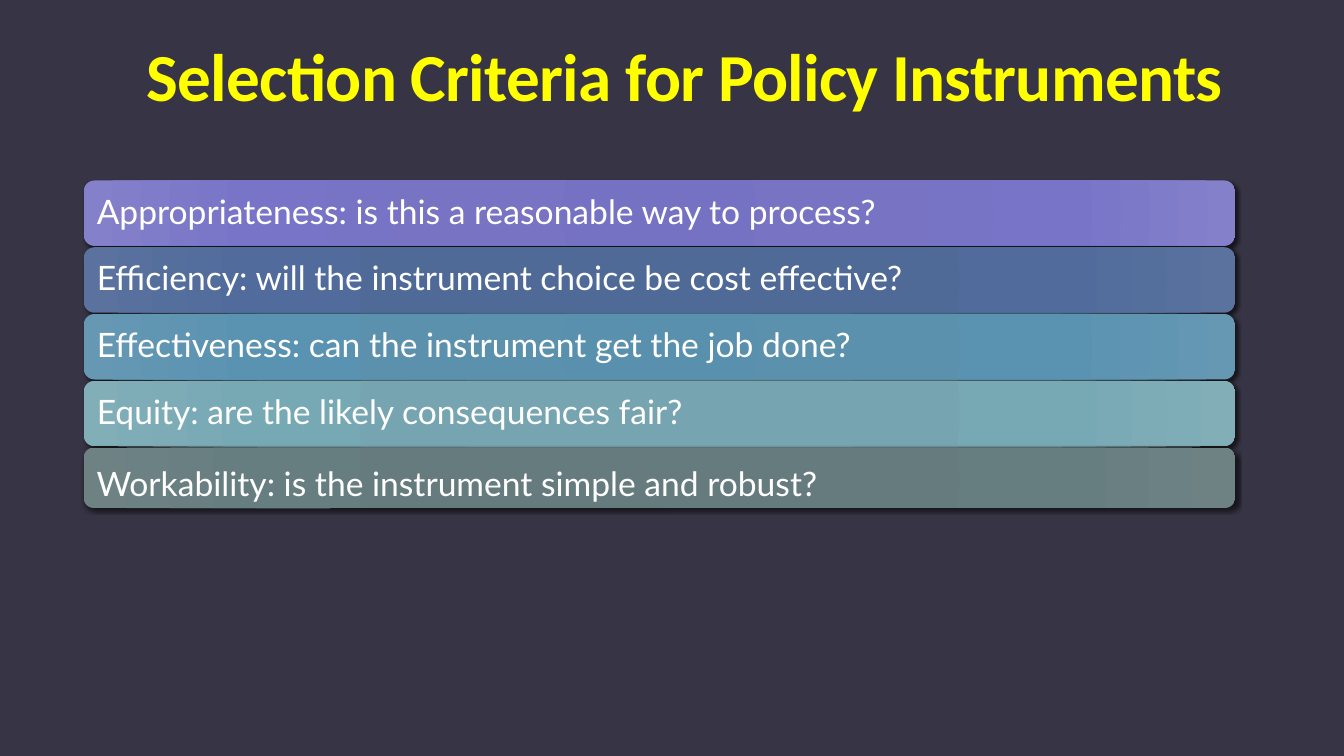
from dataclasses import dataclass

from lxml import etree
from pptx import Presentation
from pptx.dml.color import RGBColor
from pptx.enum.shapes import MSO_SHAPE
from pptx.enum.text import MSO_ANCHOR, PP_ALIGN
from pptx.oxml import parse_xml
from pptx.oxml.ns import nsdecls, qn
from pptx.shapes.autoshape import Shape
from pptx.slide import Slide
from pptx.text.text import TextFrame
from pptx.util import Inches, Pt

ROUNDED = MSO_SHAPE.ROUNDED_RECTANGLE
MIDDLE, BOTTOM = MSO_ANCHOR.MIDDLE, MSO_ANCHOR.BOTTOM
LEFT, CENTER = PP_ALIGN.LEFT, PP_ALIGN.CENTER

COLORS = {"background": "373545", "title": "FFFF00", "text": "FFFFFF", "shadow": "000000"}
TITLE_FONT = {"name": "Calibri", "size": Pt(48), "bold": True}
BAR_FONT = {"name": "Lato", "size": Pt(24), "bold": False}

BAR_LEFT, BAR_WIDTH = 0.83, 11.42
FIRST_TOP, LAST_TOP = 1.79, 4.44
GRADIENT_POSITIONS = (0, 34, 70, 100)


@dataclass(frozen=True)
class Criterion:
    text: str
    gradient: tuple[str, str, str, str]
    height: float = 0.65
    inset_top: float = 0.1
    inset_bottom: float = 0.1


CRITERIA = (
    Criterion("Appropriateness: is this a reasonable way to process?",
              ("7572C3", "7874C3", "7874C8", "8481CA")),
    Criterion("Efficiency: will the instrument choice be cost effective?",
              ("4E6998", "506A98", "506B9C", "5A729D")),
    Criterion("Effectiveness: can the instrument get the job done?",
              ("5890AD", "5B91AD", "5A93B1", "6698B3")),
    Criterion("Equity: are the likely consequences fair?",
              ("74A4B1", "76A5B1", "77A9B5", "82AEB8")),
    Criterion("Workability: is the instrument simple and robust?",
              ("657A7D", "667B7E", "677E80", "6E8284"),
              height=0.6, inset_top=0.2, inset_bottom=0.04),
)


def write_text(frame: TextFrame, text: str, font: dict, color: str,
               alignment: PP_ALIGN, line_spacing: float) -> None:
    frame.word_wrap = True
    paragraph = frame.paragraphs[0]
    paragraph.alignment = alignment
    paragraph.line_spacing = line_spacing
    run = paragraph.add_run()
    run.text = text
    for name, value in font.items():
        setattr(run.font, name, value)
    run.font.color.rgb = RGBColor.from_string(COLORS[color])


def apply_radial_gradient(shape: Shape, colors: tuple[str, ...]) -> None:
    stops = "".join(
        f'<a:gs pos="{position * 1000}"><a:srgbClr val="{color}"/></a:gs>'
        for position, color in zip(GRADIENT_POSITIONS, colors)
    )
    gradient = parse_xml(
        f'<a:gradFill {nsdecls("a")} rotWithShape="1"><a:gsLst>{stops}</a:gsLst>'
        '<a:path path="circle"><a:fillToRect l="100000" t="100000" r="100000" b="100000"/>'
        "</a:path></a:gradFill>"
    )
    shape.fill.background()
    properties = shape.element.spPr
    properties.replace(properties.find(qn("a:noFill")), gradient)


def apply_shadow(shape: Shape) -> None:
    shape.shadow.inherit = False
    effects = shape.element.spPr.find(qn("a:effectLst"))
    shadow = etree.SubElement(effects, qn("a:outerShdw"), blurRad=str(Pt(3)),
                              dist=str(Pt(2)), dir="2700000", rotWithShape="0")
    color = etree.SubElement(shadow, qn("a:srgbClr"), val=COLORS["shadow"])
    etree.SubElement(color, qn("a:alpha"), val="60000")


def add_title(slide: Slide, text: str) -> None:
    box = slide.shapes.add_textbox(Inches(0.83), Inches(0.17), Inches(11.92), Inches(1.02))
    frame = box.text_frame
    frame.vertical_anchor = BOTTOM
    write_text(frame, text, TITLE_FONT, "title", CENTER, 0.85)
    for run_properties in box.element.iter(qn("a:rPr")):
        run_properties.set("spc", "-50")


def add_bar(slide: Slide, criterion: Criterion, top: float) -> None:
    bar = slide.shapes.add_shape(ROUNDED, Inches(BAR_LEFT), Inches(top),
                                 Inches(BAR_WIDTH), Inches(criterion.height))
    apply_radial_gradient(bar, criterion.gradient)
    bar.line.fill.background()
    apply_shadow(bar)
    frame = bar.text_frame
    frame_format = {
        "vertical_anchor": MIDDLE,
        "margin_left": Inches(0.1),
        "margin_right": Inches(0.1),
        "margin_top": Inches(criterion.inset_top),
        "margin_bottom": Inches(criterion.inset_bottom),
    }
    for name, value in frame_format.items():
        setattr(frame, name, value)
    write_text(frame, criterion.text, BAR_FONT, "text", LEFT, 0.9)


def main() -> None:
    presentation = Presentation()
    presentation.slide_width = Inches(13.33)
    presentation.slide_height = Inches(7.5)
    slide = presentation.slides.add_slide(presentation.slide_layouts[6])
    background = slide.background.fill
    background.solid()
    background.fore_color.rgb = RGBColor.from_string(COLORS["background"])

    add_title(slide, "Selection Criteria for Policy Instruments")
    pitch = (LAST_TOP - FIRST_TOP) / (len(CRITERIA) - 1)
    for index, criterion in enumerate(CRITERIA):
        add_bar(slide, criterion, FIRST_TOP + index * pitch)
    presentation.save("out.pptx")


if __name__ == "__main__":
    main()
